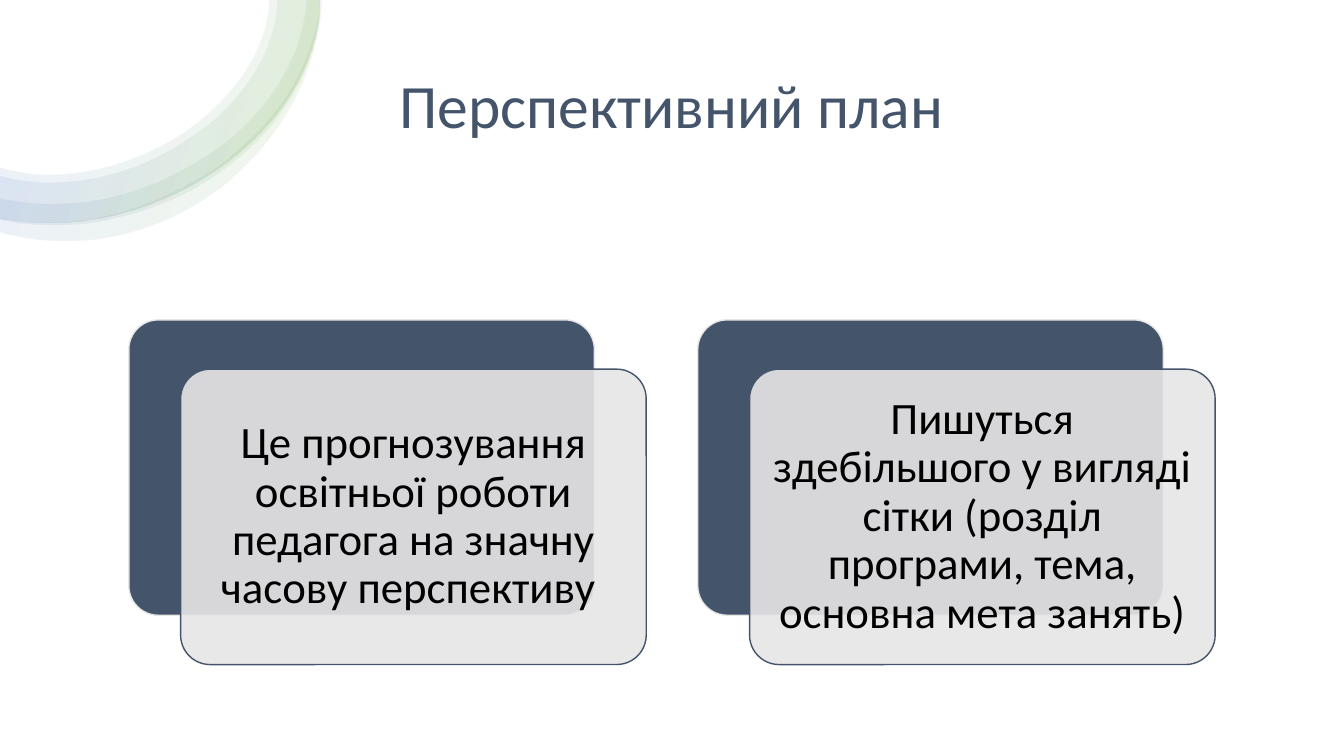
"""Build the slide on the long-term plan with a ribbon and two cards."""
from lxml.etree import SubElement as Sub
from pptx import Presentation
from pptx.dml.color import RGBColor as RGB
from pptx.enum.shapes import MSO_SHAPE as Kind
from pptx.enum.text import MSO_ANCHOR as Anchor, PP_ALIGN as Align
from pptx.oxml.ns import qn
from pptx.util import Pt

NAVY = RGB(0x44, 0x54, 0x6A)
GREY = RGB(0xE7, 0xE6, 0xE6)
BLACK = RGB(0, 0, 0)
WHITE = RGB(0xFF, 0xFF, 0xFF)
GREEN = RGB(0x70, 0xAD, 0x47)
BLUE = RGB(0x44, 0x72, 0xC4)

FONT = "Calibri"
STOPS = [(2, WHITE), (16, GREEN), (85, BLUE), (100, WHITE)]

MAIN = [(228.2, 0), (227.5, 13), (216.7, 95), (125.3, 159), (35.3, 159),
        (23.8, 159), (13.7, 157.7), (2.9, 156.2), (0, 155.5)]
WIDE = [(192.2, 0), (191.5, 7.9), (190, 20), (185.8, 32.4), (179.3, 43.9),
        (171.4, 58.3), (159.1, 72.7), (144, 85), (129.6, 97.2), (111.6, 107.3),
        (92.9, 113.8), (74.2, 121), (54, 124.6), (35.3, 124.6), (26.6, 124.6),
        (18, 123.8), (9.4, 121.7), (0, 119.5)]
MID = [(198, 0), (197.3, 8.6), (195.8, 21.6), (191.5, 33.8), (185, 46.1),
       (176.4, 61.9), (164.2, 76.3), (148.3, 89.3), (132.5, 101.5), (114.5, 112.3),
       (95, 119.5), (74.9, 126.7), (54.7, 130.3), (35.3, 130.3), (25.9, 130.3),
       (16.6, 128.9), (8.6, 127.4), (0, 125.3)]
LOW = [(228.2, 0), (228.2, 12.2), (223.2, 48.9), (204.1, 82.1), (177.1, 106.6),
       (161.5, 120.7), (142.4, 133.6), (123.1, 141.8), (103.7, 150.5), (82.1, 156.2),
       (60.5, 159.1), (43.9, 160.7), (27.4, 160.4), (10.8, 158.4), (0, 156.2)]
THIN = [(218.9, 0), (217.4, 10.8), (215.5, 25), (210.5, 38.5), (203.8, 51.1),
        (194.5, 68.5), (182, 83.5), (167, 96.5), (151.9, 109.4), (134.6, 119.5),
        (115.9, 128.2), (98, 136), (78, 142), (58.3, 144), (43, 145.3),
        (28, 145.5), (13, 143.3), (0, 141.1)]
RIM = [(229.7, 0), (229, 8.6), (227.5, 24.5), (223.2, 40.3), (217.4, 55.4),
       (209, 76), (197, 95), (182.2, 110.9), (174.5, 119), (166.5, 127),
       (157.7, 133.9), (148.3, 140.4), (139, 146.9), (128.9, 151.9), (108, 162.7),
       (85.7, 169.2), (61.9, 171.4), (41, 173.2), (20.5, 171), (1.4, 166.3),
       (0, 165.6)]
SLIM = [(227.5, 0), (227.5, 8.6), (225.4, 24), (220, 39.5), (213.1, 53.3),
        (204, 72.5), (190.5, 88.5), (174.2, 103), (159.5, 117.5), (141.5, 129),
        (121, 138.2), (102, 147.5), (81.5, 154), (60.5, 157), (44, 159),
        (28, 159.5), (12.2, 157.7), (0, 155.5)]
BANDS = [(MAIN, WIDE), (MAIN, MID), (LOW, THIN), (RIM, SLIM)]

CARDS = ["Це прогнозування освітньої роботи педагога на значну часову перспективу ",
         "Пишуться здебільшого у вигляді сітки (розділ програми, тема, "
         "основна мета занять)"]
LEFT, TOP, PITCH = 92, 228.5, 406.4
WIDTH, HEIGHT = 332.6, 211
SHIFT_X, SHIFT_Y, INSET = 37, 35.2, 6.2


def set_alpha(color, percent):
    """Give a colour element its opacity."""
    Sub(color, qn("a:alpha"), val=str(percent * 1000))


def bend(lines):
    """Turn the inner line segments of one edge into cubic curves."""
    for i in range(0, len(lines), 3):
        first, *rest = lines[i:i + 3]
        first.tag = qn("a:cubicBezTo")
        for line in rest:
            first.append(line[0])
            line.getparent().remove(line)


def fade(band):
    """Give a band its translucent gradient."""
    band.fill.gradient()
    band.fill.gradient_angle = 160
    stops = next(band._element.spPr.iter(qn("a:gsLst")))
    stops.clear()
    for place, color in STOPS:
        stop = Sub(stops, qn("a:gs"), pos=str(place * 1000))
        set_alpha(Sub(stop, qn("a:srgbClr"), val=str(color)), 10)


def add_band(slide, outer, inner):
    """Add one curved band between two edges."""
    start, *rest = [(Pt(x), Pt(y)) for x, y in outer + inner[::-1]]
    draft = slide.shapes.build_freeform(*start)
    draft.add_line_segments(rest, close=True)
    band = draft.convert_to_shape()
    lines = list(band._element.spPr.iter(qn("a:lnTo")))
    size = len(outer)
    bend(lines[1:size - 2])
    bend(lines[size + 1:size + len(inner) - 2])
    band.shadow.inherit = False
    band.line.fill.background()
    fade(band)


def add_text(frame, text, size, color):
    """Fill a text frame with one centred run."""
    frame.word_wrap = True
    frame.vertical_anchor = Anchor.MIDDLE
    para = frame.paragraphs[0]
    para.alignment = Align.CENTER
    para.line_spacing = 0.9
    run = para.add_run()
    run.text = text
    run.font.name = FONT
    run.font.size = Pt(size)
    run.font.color.rgb = color


def add_title(slide, text):
    """Place and fill the title."""
    title = slide.shapes.title
    title.left, title.top = Pt(92.9), Pt(25.2)
    title.width, title.height = Pt(774), Pt(104.4)
    add_text(title.text_frame, text, 44, NAVY)


def add_panel(slide, left, top, fill, line):
    """Add a rounded panel and return it."""
    panel = slide.shapes.add_shape(Kind.ROUNDED_RECTANGLE, Pt(left), Pt(top),
                                   Pt(WIDTH), Pt(HEIGHT))
    panel.adjustments[0] = 0.1
    panel.shadow.inherit = False
    panel.fill.solid()
    panel.fill.fore_color.rgb = fill
    panel.line.color.rgb = line
    panel.line.width = Pt(1)
    return panel


def add_card(slide, left, text):
    """Add a dark panel with a light text card over it."""
    add_panel(slide, left, TOP, NAVY, GREY)
    x, y = left + SHIFT_X, TOP + SHIFT_Y
    front = add_panel(slide, x, y, GREY, NAVY)
    set_alpha(next(front._element.spPr.iter(qn("a:srgbClr"))), 90)
    box = slide.shapes.add_textbox(Pt(x + INSET), Pt(y + INSET),
                                   Pt(WIDTH - 2 * INSET), Pt(HEIGHT - 2 * INSET))
    frame = box.text_frame
    frame.margin_left = frame.margin_right = Pt(9.6)
    frame.margin_top = frame.margin_bottom = Pt(9.6)
    add_text(frame, text, 32, BLACK)


def main():
    """Build and save the slide."""
    deck = Presentation()
    deck.slide_width, deck.slide_height = Pt(960), Pt(540)
    slide = deck.slides.add_slide(deck.slide_layouts[5])
    slide.background.fill.solid()
    slide.background.fill.fore_color.rgb = WHITE
    add_title(slide, "Перспективний план")
    for outer, inner in BANDS:
        add_band(slide, outer, inner)
    for i, text in enumerate(CARDS):
        add_card(slide, LEFT + i * PITCH, text)
    deck.save("out.pptx")


if __name__ == "__main__":
    main()
